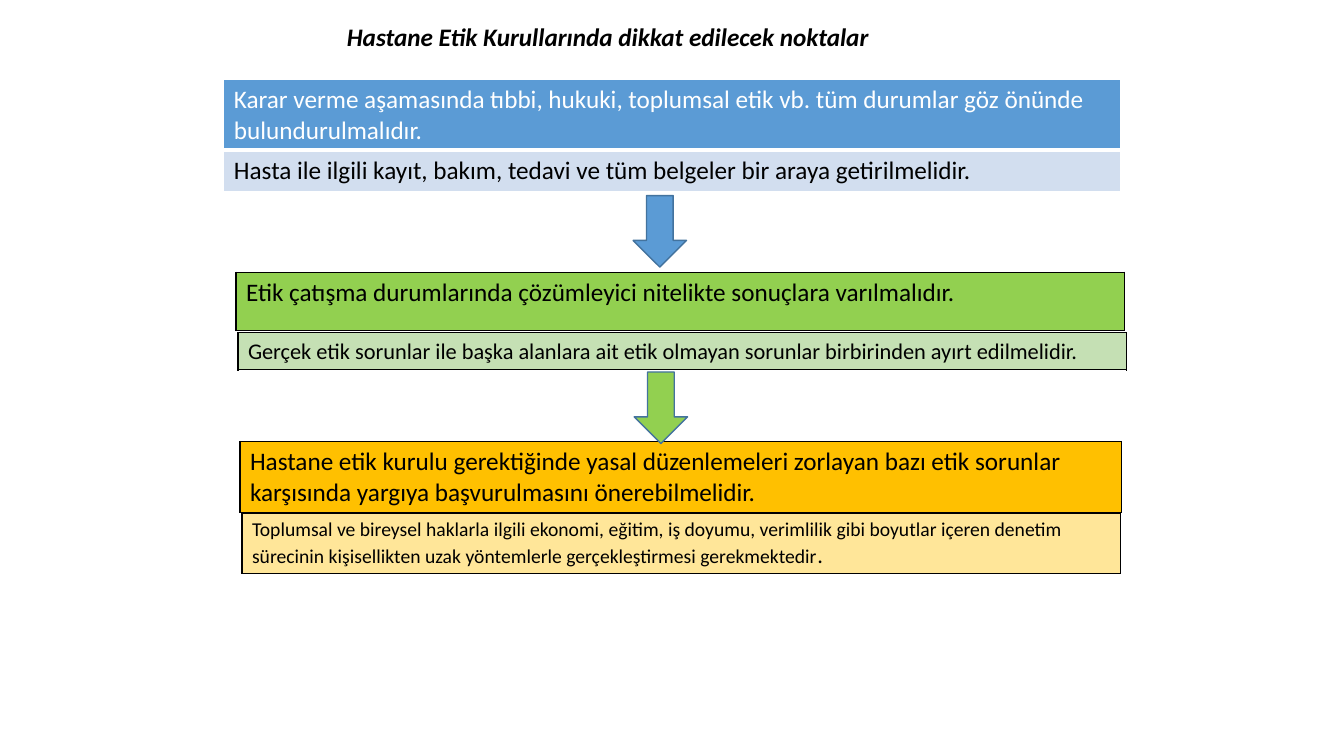
"""Build the slide on points to watch in hospital ethics boards."""
from lxml import etree
from pptx import Presentation
from pptx.dml.color import RGBColor
from pptx.enum.shapes import MSO_SHAPE
from pptx.enum.text import MSO_ANCHOR, MSO_AUTO_SIZE, PP_ALIGN
from pptx.oxml.ns import qn
from pptx.util import Pt

PX = 9144
DOWN_ARROW = MSO_SHAPE.DOWN_ARROW
TOP, LEFT = MSO_ANCHOR.TOP, PP_ALIGN.LEFT
FIT_SHAPE = MSO_AUTO_SIZE.SHAPE_TO_FIT_TEXT
TITLE_ONLY = 5
FONT = "Calibri"

BLACK = RGBColor(0x00, 0x00, 0x00)
WHITE = RGBColor(0xFF, 0xFF, 0xFF)
BLUE = RGBColor(0x5B, 0x9B, 0xD5)
PALE_BLUE = RGBColor(0xD2, 0xDE, 0xEF)
DARK_BLUE = RGBColor(0x43, 0x73, 0x9E)
GREEN = RGBColor(0x92, 0xD0, 0x50)
PALE_GREEN = RGBColor(0xC5, 0xE0, 0xB4)
AMBER = RGBColor(0xFF, 0xC0, 0x00)
PALE_AMBER = RGBColor(0xFF, 0xE6, 0x99)

TABLES = [
    (222, 79, 889, WHITE, [
        (70, BLUE, WHITE, 3, [("Karar verme aşamasında tıbbi, hukuki, toplumsal etik vb. tüm durumlar göz önünde bulundurulmalıdır.", 18)]),
        (41, PALE_BLUE, BLACK, 1, [("Hasta ile ilgili kayıt, bakım, tedavi ve tüm belgeler bir araya getirilmelidir.", 18)]),
    ]),
    (234, 270, 881, BLACK, [
        (58, GREEN, BLACK, 1, [("Etik çatışma durumlarında çözümleyici nitelikte sonuçlara varılmalıdır.", 18)]),
    ]),
    (236, 330, 881, BLACK, [
        (37, PALE_GREEN, BLACK, 1, [("Gerçek etik sorunlar ile başka alanlara ait etik olmayan sorunlar birbirinden ayırt edilmelidir.", 16)]),
    ]),
    (238, 438, 874, BLACK, [
        (70, AMBER, BLACK, 1, [("Hastane etik kurulu gerektiğinde yasal düzenlemeleri zorlayan bazı etik sorunlar karşısında yargıya başvurulmasını önerebilmelidir.", 18)]),
    ]),
    (240, 509, 871, BLACK, [
        (60, PALE_AMBER, BLACK, 1, [
            ("Toplumsal ve bireysel haklarla ilgili ekonomi, eğitim, iş doyumu, verimlilik gibi boyutlar içeren denetim sürecinin kişisellikten uzak yöntemlerle gerçekleştirmesi gerekmektedir", 14),
            (".", 16),
        ]),
    ]),
]
ARROWS = [(628, 194, BLUE), (629, 369, GREEN)]


def set_borders(cell, color, bottom_width):
    """Draw four solid borders, one point wide except the bottom one."""
    properties = cell._tc.get_or_add_tcPr()
    for side, width in (("L", 1), ("R", 1), ("T", 1), ("B", bottom_width)):
        line = etree.SubElement(properties, qn(f"a:ln{side}"), w=str(Pt(width)))
        fill = etree.SubElement(line, qn("a:solidFill"))
        etree.SubElement(fill, qn("a:srgbClr"), val=str(color))


presentation = Presentation()
presentation.slide_width = 1333 * PX
presentation.slide_height = 750 * PX
slide = presentation.slides.add_slide(presentation.slide_layouts[TITLE_ONLY])

title = slide.shapes.title
title.left, title.top, title.width, title.height = 334 * PX, 16 * PX, 549 * PX, 40 * PX
title.text = "Hastane Etik Kurullarında dikkat edilecek noktalar"
frame = title.text_frame
frame.word_wrap = False
frame.auto_size = FIT_SHAPE
frame.vertical_anchor = TOP
paragraph = frame.paragraphs[0]
paragraph.alignment = LEFT
paragraph.font.name = FONT
paragraph.font.size = Pt(18)
paragraph.font.bold = True
paragraph.font.italic = True
paragraph.font.color.rgb = BLACK

for left, top, width, border, rows in TABLES:
    height = sum(row[0] for row in rows)
    table = slide.shapes.add_table(
        len(rows), 1, left * PX, top * PX, width * PX, height * PX).table
    table.first_row = False
    table.horz_banding = False
    for index, (row_height, fill, color, bottom_width, runs) in enumerate(rows):
        table.rows[index].height = row_height * PX
        cell = table.cell(index, 0)
        set_borders(cell, border, bottom_width)
        cell.fill.solid()
        cell.fill.fore_color.rgb = fill
        paragraph = cell.text_frame.paragraphs[0]
        for text, size in runs:
            run = paragraph.add_run()
            run.text = text
            run.font.name = FONT
            run.font.size = Pt(size)
            run.font.color.rgb = color

for left, top, color in ARROWS:
    arrow = slide.shapes.add_shape(DOWN_ARROW, left * PX, top * PX, 53 * PX, 71 * PX)
    arrow.shadow.inherit = False
    arrow.fill.solid()
    arrow.fill.fore_color.rgb = color
    arrow.line.color.rgb = DARK_BLUE
    arrow.line.width = Pt(1)

presentation.save("out.pptx")
